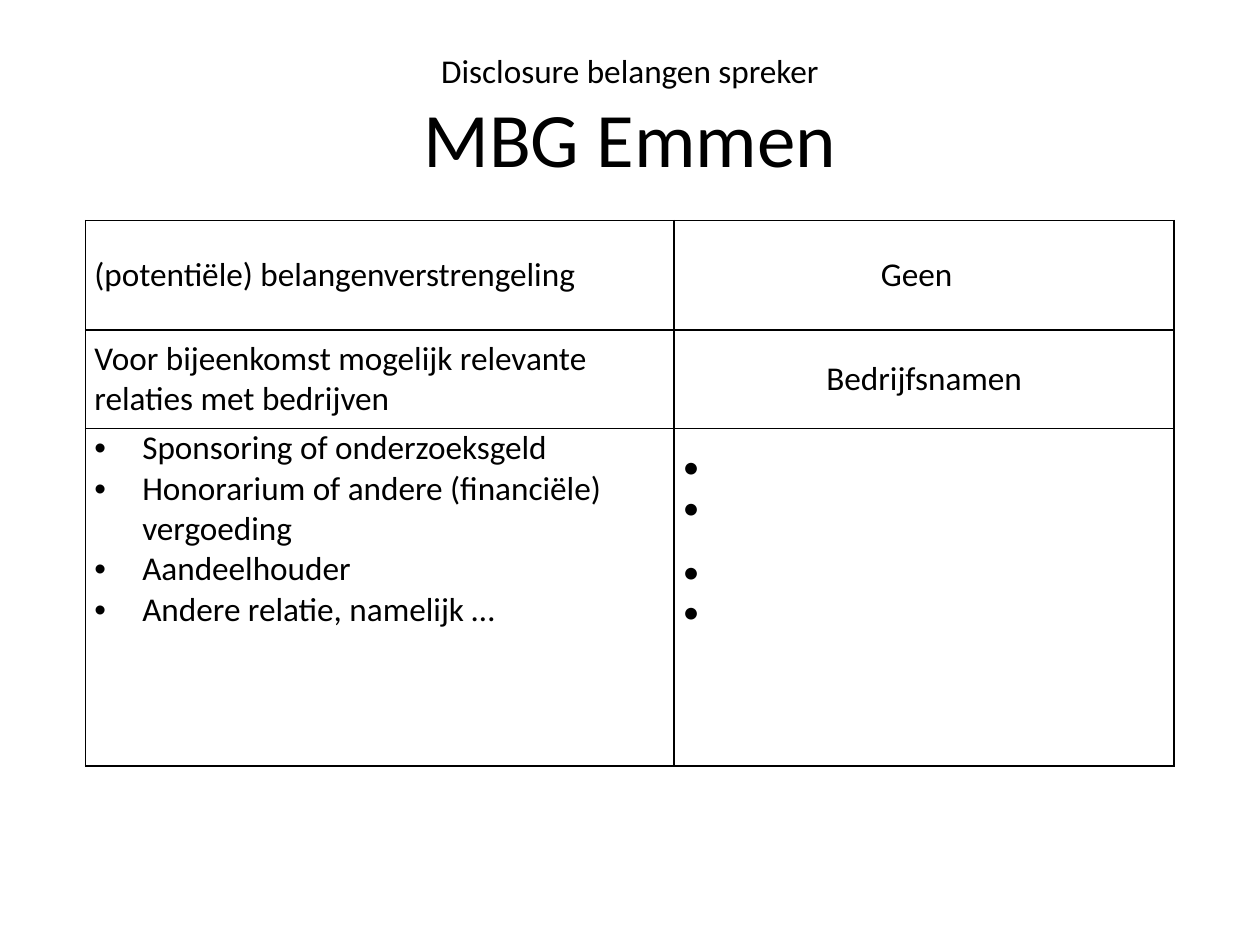
from lxml import etree
from pptx import Presentation
from pptx.dml.color import RGBColor
from pptx.enum.text import MSO_ANCHOR, MSO_AUTO_SIZE, PP_ALIGN
from pptx.oxml.ns import qn
from pptx.util import Inches, Pt

CENTER, LEFT = PP_ALIGN.CENTER, PP_ALIGN.LEFT
MIDDLE, TOP = MSO_ANCHOR.MIDDLE, MSO_ANCHOR.TOP
NO_AUTOFIT = MSO_AUTO_SIZE.NONE
TITLE_ONLY = 5
FONT, BLACK = "Calibri", "000000"
BODY_SIZE, TITLE_SIZE = 19, 44


def style_run(run, size, color=BLACK):
    run.font.name = FONT
    run.font.size = Pt(size)
    run.font.bold = False
    run.font.color.rgb = RGBColor.from_string(color)


def add_borders(cell, color=BLACK):
    properties = cell._tc.get_or_add_tcPr()
    for side in ("a:lnL", "a:lnR", "a:lnT", "a:lnB"):
        line = etree.SubElement(properties, qn(side), w=str(Pt(1)))
        fill = etree.SubElement(line, qn("a:solidFill"))
        etree.SubElement(fill, qn("a:srgbClr"), val=color)


deck = Presentation()
deck.slide_width, deck.slide_height = Inches(10), Inches(7.5)
slide = deck.slides.add_slide(deck.slide_layouts[TITLE_ONLY])

# Title: small heading above the large name
title = slide.shapes.title
title.left, title.top = Inches(0.5), Inches(0.3)
title.width, title.height = Inches(9), Inches(1.25)
frame = title.text_frame
frame.text = "Disclosure belangen spreker\vMBG Emmen"
frame.auto_size = NO_AUTOFIT
frame.vertical_anchor = MIDDLE
frame.paragraphs[0].alignment = CENTER
for run, size in zip(frame.paragraphs[0].runs, (BODY_SIZE, TITLE_SIZE)):
    style_run(run, size)

# Disclosure table
rows = [
    ["(potentiële) belangenverstrengeling", "Geen  "],
    ["Voor bijeenkomst mogelijk relevante relaties met bedrijven", "Bedrijfsnamen"],
    ["Sponsoring of onderzoeksgeld\n"
     "Honorarium of andere (financiële) vergoeding\n"
     "Aandeelhouder\n"
     "Andere relatie, namelijk …", "•\n•\n•\n•"],
]
table = slide.shapes.add_table(
    3, 2, Inches(0.68), Inches(1.75), Inches(8.64), Inches(4.33)).table
table.first_row = table.horz_banding = False
for column, width in zip(table.columns, (4.67, 3.97)):
    column.width = Inches(width)
for row, height in zip(table.rows, (0.87, 0.78, 2.68)):
    row.height = Inches(height)

for row_index, texts in enumerate(rows):
    is_list = row_index == 2
    for column_index, text in enumerate(texts):
        cell = table.cell(row_index, column_index)
        cell.text_frame.text = text
        cell.margin_left = cell.margin_right = Inches(0.07)
        cell.margin_top = cell.margin_bottom = 0
        cell.vertical_anchor = TOP if is_list else MIDDLE
        add_borders(cell)
        cell.fill.background()
        for para in cell.text_frame.paragraphs:
            para.alignment = CENTER if column_index and not is_list else LEFT
            for run in para.runs:
                style_run(run, BODY_SIZE)

# Bulleted relations on the left
for para in table.cell(2, 0).text_frame.paragraphs:
    properties = para._p.get_or_add_pPr()
    properties.set("marL", str(Inches(0.38)))
    properties.set("indent", str(-Inches(0.38)))
    etree.SubElement(properties, qn("a:buFont"), typeface="Arial")
    etree.SubElement(properties, qn("a:buChar"), char="•")

# Company marks on the right line up with the relations
companies = table.cell(2, 1)
companies.margin_top = Inches(0.15)
companies.text_frame.paragraphs[2].space_before = Pt(13.5)

deck.save("out.pptx")
